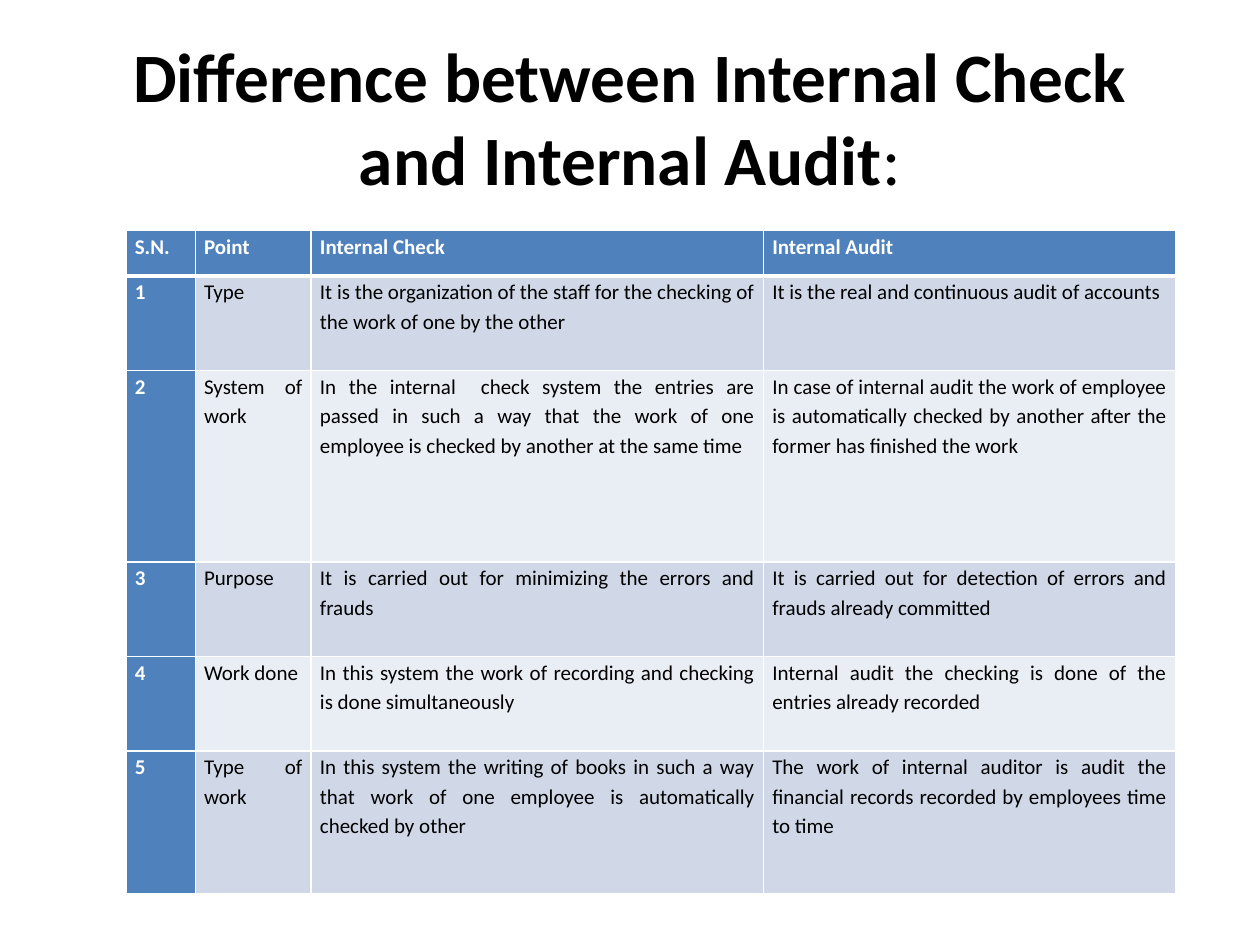
from dataclasses import dataclass

from lxml.etree import SubElement
from pptx import Presentation
from pptx.dml.color import RGBColor
from pptx.enum.text import MSO_ANCHOR, MSO_AUTO_SIZE, PP_ALIGN
from pptx.oxml.ns import qn
from pptx.util import Inches, Pt

HEAD, WHITE, BLACK = "4F81BD", "FFFFFF", "000000"
BANDS = "D0D8E8", "E9EDF4"
WIDTHS = 0.55, 0.92, 3.59, 3.27
FRAME = dict(left=Inches(0.5), top=Inches(0.3), width=Inches(9), height=Inches(1.25))
TITLE = dict(word_wrap=True, auto_size=MSO_AUTO_SIZE.NONE, vertical_anchor=MSO_ANCHOR.MIDDLE)
CELL = dict(margin_left=Inches(0.07), margin_right=Inches(0.07), margin_top=0,
            margin_bottom=0, vertical_anchor=MSO_ANCHOR.TOP)
PARA = dict(alignment=PP_ALIGN.JUSTIFY, line_spacing=1.15)


@dataclass
class Row:
    height: float
    texts: tuple[str, str, str, str]


ROWS = [
    Row(0.36, ("S.N.", "Point", "Internal Check", "Internal Audit")),
    Row(0.75, ("1", "Type",
               "It is the organization of the staff for the checking of the work of one by the other",
               "It is the real and continuous audit of accounts")),
    Row(1.52, ("2", "System of work",
               "In the internal  check system the entries are passed in such a way that "
               "the work of one employee is checked by another at the same time",
               "In case of internal audit the work of employee is automatically checked "
               "by another after the former has finished the work")),
    Row(0.75, ("3", "Purpose",
               "It is carried out for minimizing the errors and frauds",
               "It is carried out for detection of errors and frauds already committed")),
    Row(0.75, ("4", "Work done",
               "In this system the work of recording and checking is done simultaneously",
               "Internal audit the checking is done of the entries already recorded")),
    Row(1.13, ("5", "Type of work",
               "In this system the writing of books in such a way that work of one "
               "employee is automatically checked by other",
               "The work of internal auditor is audit the financial records recorded "
               "by employees time to time")),
]


def color(code: str) -> RGBColor:
    return RGBColor.from_string(code)


def apply(item, values: dict) -> None:
    for name, value in values.items():
        setattr(item, name, value)


def write(para, text: str, size: float, code: str, bold: bool) -> None:
    run = para.add_run()
    run.text = text
    apply(run.font, dict(name="Calibri", size=Pt(size), bold=bold))
    run.font.color.rgb = color(code)


def border(cell, row: int) -> None:
    props = cell._tc.get_or_add_tcPr()
    sides = dict(lnL=1, lnR=1, lnT=3 if row == 1 else 1, lnB=3 if row == 0 else 1)
    for side, width in sides.items():
        line = SubElement(props, qn(f"a:{side}"), w=str(Pt(width)))
        fill = SubElement(line, qn("a:solidFill"))
        SubElement(fill, qn("a:srgbClr"), val=WHITE)


def draw_cell(cell, text: str, row: int, col: int) -> None:
    label = row == 0 or col == 0
    apply(cell, CELL)
    border(cell, row)
    cell.fill.solid()
    cell.fill.fore_color.rgb = color(HEAD if label else BANDS[(row - 1) % 2])
    para = cell.text_frame.paragraphs[0]
    apply(para, PARA)
    write(para, text, 12, WHITE if label else BLACK, label)


def draw_title(shape) -> None:
    apply(shape, FRAME)
    apply(shape.text_frame, TITLE)
    para = shape.text_frame.paragraphs[0]
    para.alignment = PP_ALIGN.CENTER
    write(para, "Difference between Internal Check and Internal Audit", 39.6, BLACK, True)
    write(para, ":", 39.6, BLACK, False)


def draw_table(slide) -> None:
    height = sum(row.height for row in ROWS)
    table = slide.shapes.add_table(len(ROWS), len(WIDTHS), Inches(1), Inches(1.83),
                                   Inches(sum(WIDTHS)), Inches(height)).table
    table.first_col = True
    for col, width in zip(table.columns, WIDTHS):
        col.width = Inches(width)
    for r, row in enumerate(ROWS):
        table.rows[r].height = Inches(row.height)
        for c, text in enumerate(row.texts):
            draw_cell(table.cell(r, c), text, r, c)


def main() -> None:
    deck = Presentation()
    apply(deck, dict(slide_width=Inches(10), slide_height=Inches(7.5)))
    slide = deck.slides.add_slide(deck.slide_layouts[5])
    draw_title(slide.shapes.title)
    draw_table(slide)
    deck.save("out.pptx")


if __name__ == "__main__":
    main()
